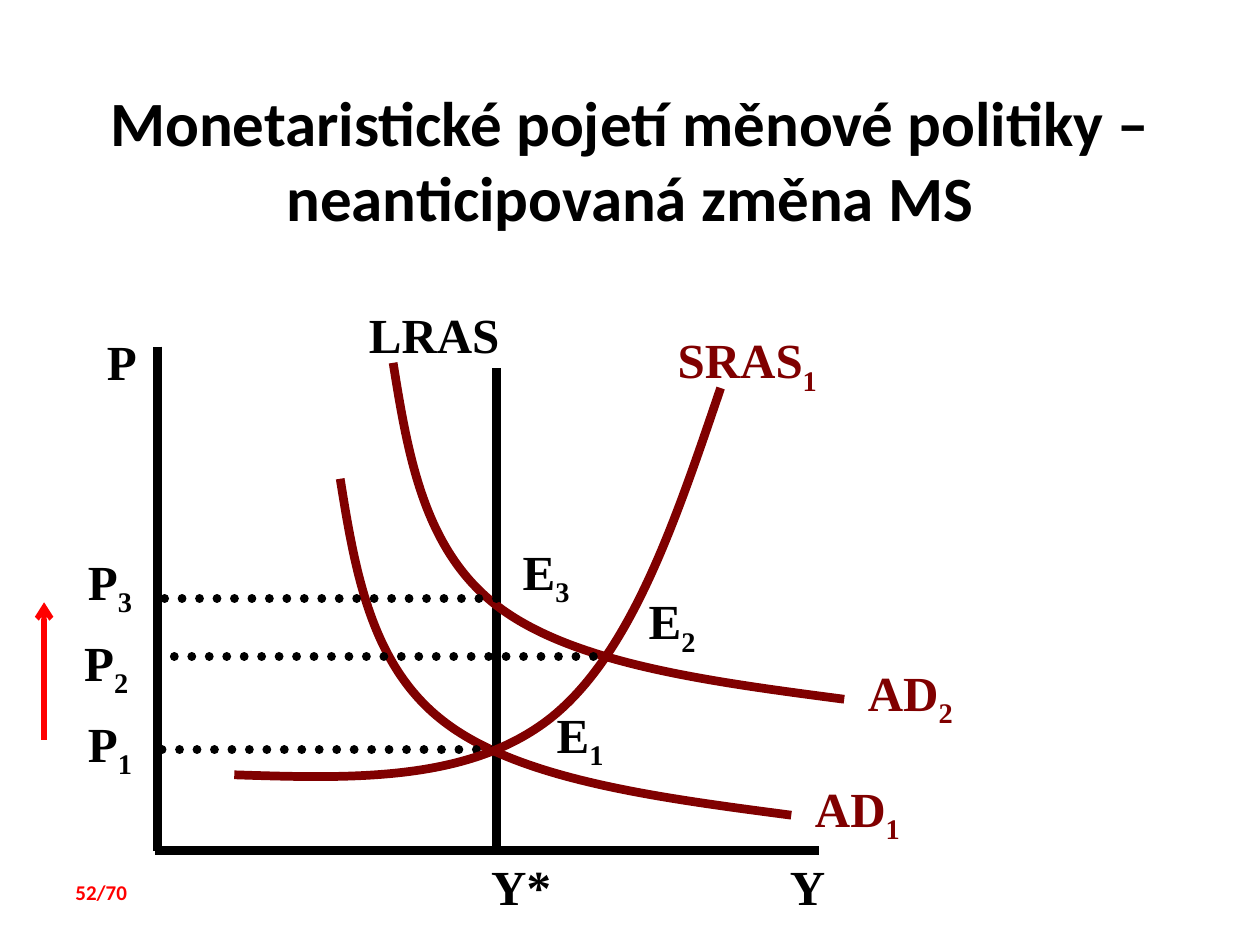
from collections import namedtuple

from lxml.etree import SubElement
from pptx import Presentation
from pptx.dml.color import RGBColor
from pptx.enum.dml import MSO_LINE
from pptx.enum.shapes import MSO_CONNECTOR
from pptx.enum.text import MSO_ANCHOR, MSO_AUTO_SIZE, PP_ALIGN
from pptx.oxml.ns import qn
from pptx.util import Inches, Pt

Theme = namedtuple("Theme", "ink curve alert head label note sans serif")
theme = Theme(
    ink=RGBColor(0, 0, 0), curve=RGBColor(0x80, 0, 0), alert=RGBColor(0xFF, 0, 0),
    head=Pt(36), label=Pt(28), note=Pt(12), sans="Calibri", serif="Times New Roman",
)


def write(frame, text, sub="", color=theme.ink, size=theme.label, face=theme.serif,
          align=PP_ALIGN.LEFT):
    frame.word_wrap = True
    frame.auto_size = MSO_AUTO_SIZE.NONE
    frame.vertical_anchor = MSO_ANCHOR.TOP
    para = frame.paragraphs[0]
    para.alignment = align
    para.space_before = Pt(0)
    for part, base in ((text, 0), (sub, -25000)):
        if part:
            run = para.add_run()
            run.text = part
            run.font.name = face
            run.font.size = size
            run.font.bold = True
            run.font.color.rgb = color
            if base:
                run._r.get_or_add_rPr().set("baseline", str(base))


def trim(shape, color, width):
    shape.line.color.rgb = color
    shape.line.width = Pt(width)
    SubElement(shape._element.spPr, qn("a:effectLst"))


deck = Presentation()
deck.slide_width, deck.slide_height = Inches(10), Inches(7.5)
slide = deck.slides.add_slide(deck.slide_layouts[5])
shapes = slide.shapes

title = shapes.title
title.left, title.top = Inches(0), Inches(0.61)
title.width, title.height = Inches(10), Inches(1.31)
write(title.text_frame, "Monetaristické pojetí měnové politiky – neanticipovaná změna MS",
      size=theme.head, face=theme.sans, align=PP_ALIGN.CENTER)

base, full = 6.75, 3.94
for x1, y1, x2, y2, width in (
    (1.25, 2.75, 1.25, base, 5.5),
    (1.23, base, 6.5, base, 5),
    (full, base, full, 2.92, 5),
):
    axis = shapes.add_connector(
        MSO_CONNECTOR.STRAIGHT, Inches(x1), Inches(y1), Inches(x2), Inches(y2))
    trim(axis, theme.ink, width)

demand = [(2.7, 3.8), (2.82, 4.55), (2.95, 5.3), (3.54, 5.74),
          (4.14, 6.19), (5.21, 6.33), (6.28, 6.47)]
shifted = [(x + 0.42, y - 0.92) for x, y in demand]
supply = [(1.86, 6.15), (2.79, 6.18), (3.72, 6.21), (4.37, 5.7),
          (5.01, 5.19), (5.36, 4.14), (5.72, 3.08)]
for knots in (demand, shifted, supply):
    points = [(Inches(x), Inches(y)) for x, y in knots]
    pen = shapes.build_freeform(*points[0])
    pen.add_line_segments(points[1:], close=False)
    curve = pen.convert_to_shape()
    outline = next(curve._element.iter(qn("a:path")))
    legs = outline.findall(qn("a:lnTo"))
    for start in (0, 3):
        bend = SubElement(outline, qn("a:cubicBezTo"))
        for leg in legs[start:start + 3]:
            bend.append(leg[0])
            outline.remove(leg)
    curve.fill.background()
    trim(curve, theme.curve, 5)

for right, left, y in ((3.92, 1.23, 5.95), (4.71, 1.27, 5.21), (full, 1.25, 4.75)):
    guide = shapes.add_connector(
        MSO_CONNECTOR.STRAIGHT, Inches(right), Inches(y), Inches(left), Inches(y))
    trim(guide, theme.ink, 5)
    guide.line.dash_style = MSO_LINE.ROUND_DOT
    guide.line._ln.set("cap", "rnd")
shapes._spTree.append(curve._element)

arrow = shapes.add_connector(
    MSO_CONNECTOR.STRAIGHT, Inches(0.35), Inches(5.87), Inches(0.35), Inches(4.78))
trim(arrow, theme.alert, 3)
SubElement(arrow.line._ln, qn("a:tailEnd"), type="arrow")

for text, sub, x, y, width, color in (
    ("P", "", 0.75, 2.58, 0.67, theme.ink),
    ("Y", "", 6.17, 6.75, 0.67, theme.ink),
    ("Y*", "", 3.8, 6.75, 0.92, theme.ink),
    ("LRAS", "", 2.83, 2.37, 1.5, theme.ink),
    ("SRAS", "1", 5.28, 2.57, 1.43, theme.curve),
    ("AD", "1", 6.37, 6.13, 1.17, theme.curve),
    ("AD", "2", 6.79, 5.21, 1.17, theme.curve),
    ("P", "1", 0.6, 5.61, 0.67, theme.ink),
    ("P", "2", 0.57, 4.97, 0.67, theme.ink),
    ("P", "3", 0.6, 4.33, 0.67, theme.ink),
    ("E", "1", 4.32, 5.54, 0.67, theme.ink),
    ("E", "2", 5.05, 4.64, 0.67, theme.ink),
    ("E", "3", 4.05, 4.25, 0.67, theme.ink),
):
    label = shapes.add_textbox(Inches(x), Inches(y), Inches(width), Inches(0.57))
    write(label.text_frame, text, sub=sub, color=color)

page = shapes.add_textbox(Inches(0.5), Inches(6.93), Inches(0.92), Inches(0.3))
write(page.text_frame, "52/70", color=theme.alert, size=theme.note, face=theme.sans)

deck.save("out.pptx")
